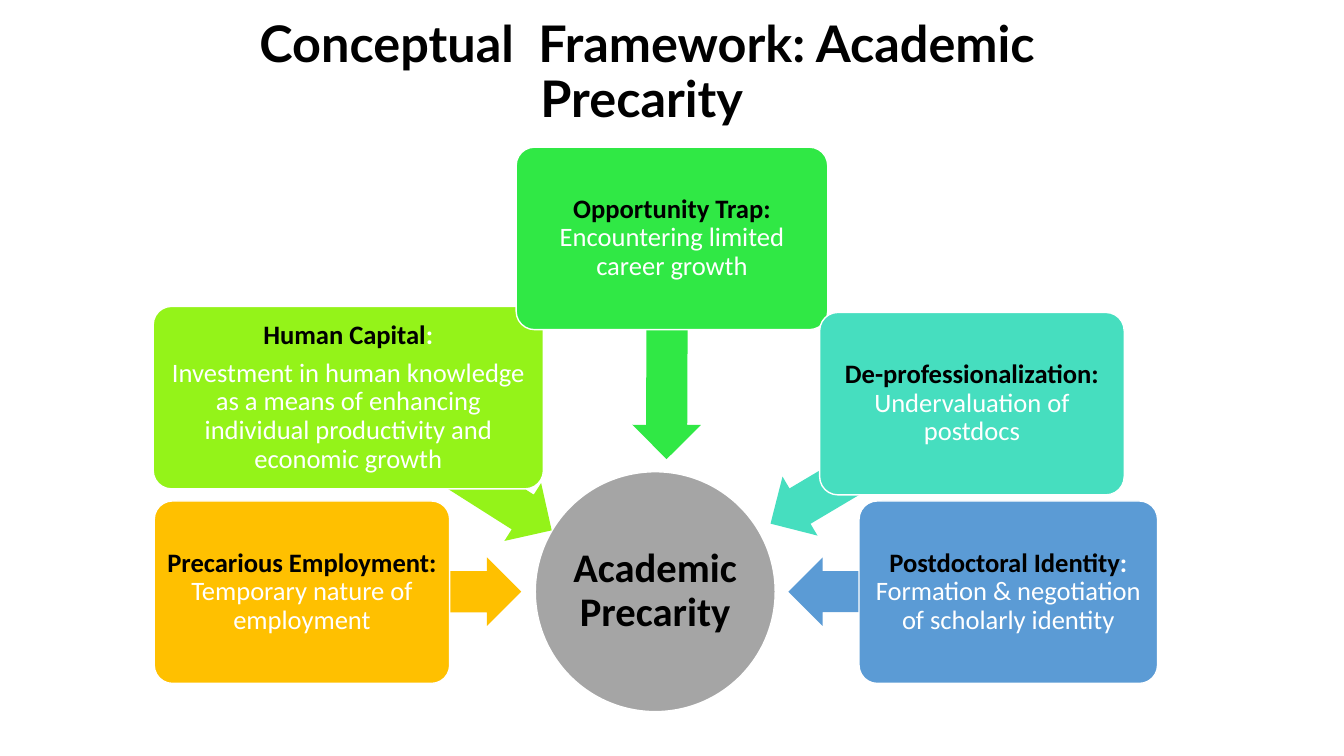
from pptx import Presentation
from pptx.util import Inches, Pt
from pptx.dml.color import RGBColor
from pptx.enum.shapes import MSO_SHAPE
from pptx.enum.text import MSO_ANCHOR, PP_ALIGN

# Grid: 100 columns by 100 rows over the slide
WIDE, HIGH = Inches(13.33), Inches(7.5)
BLACK, WHITE, GREY = "000000", "FFFFFF", "A5A5A5"
BOX_ROWS, ARROW_ROWS = 24.13, 9.07
LOW_BOX, LOW_ARROW = 66.27, 73.73

# Factors: fill, box (col, row, cols), arrow (col, row, cols, turn),
# paragraphs of (text, colour, bold) runs
FACTORS = [
    ("FFC000", (11.48, LOW_BOX, 21.98), (22.43, LOW_ARROW, 16.35, 180),
     [[("Precarious Employment: ", BLACK, True),
       ("Temporary nature of employment", WHITE, False)]]),
    ("94F319", (11.4, 40.53, 29.03), (25.28, 57.47, 17.1, 212.4),
     [[("Human Capital", BLACK, True), (":", WHITE, True)],
      [("Investment in human knowledge as a means of enhancing "
        "individual productivity and economic growth", WHITE, False)]]),
    ("30E845", (38.41, 19.47, 23.18), (41.41, 41.6, 16.43, 270.2),
     [[("Opportunity Trap: ", BLACK, True),
       ("Encountering limited career growth", WHITE, False)]]),
    ("46DEBF", (60.99, 41.33, 22.66), (56.11, 56.8, 17.48, 329.3),
     [[("De-professionalization: ", BLACK, True),
       ("Undervaluation of postdocs", WHITE, False)]]),
    ("5B9BD5", (63.92, LOW_BOX, 22.21), (58.66, LOW_ARROW, 16.35, 0),
     [[("Postdoctoral Identity", BLACK, True), (": ", WHITE, True),
       ("Formation & negotiation of scholarly identity", WHITE, False)]]),
]


def paint(code):
    return RGBColor.from_string(code)


def place(col, row, cols, rows):
    """Turn grid cells into left, top, width and height."""
    return [int(part * side / 100) for part, side in
            zip((col, row, cols, rows), (WIDE, HIGH, WIDE, HIGH))]


def apply(item, style):
    for name, value in style.items():
        setattr(item, name, value)


def write(shape, paras, size, face, inset, after=0):
    """Fill a shape with centred paragraphs of styled runs."""
    frame = shape.text_frame
    sides = ("left", "right", "top", "bottom")
    apply(frame, {f"margin_{side}": Inches(inset) for side in sides})
    apply(frame, {"word_wrap": True, "vertical_anchor": MSO_ANCHOR.MIDDLE})
    for index, runs in enumerate(paras):
        para = frame.add_paragraph() if index else frame.paragraphs[0]
        apply(para, {"alignment": PP_ALIGN.CENTER, "line_spacing": 0.9,
                     "space_after": Pt(after)})
        for text, color, bold in runs:
            if text == "\n":
                para.add_line_break()
                continue
            run = para.add_run()
            run.text = text
            apply(run.font, {"size": Pt(size), "name": face, "bold": bold})
            run.font.color.rgb = paint(color)


def draw(slide, kind, cells, fill, edge=True, adjust=()):
    """Add a flat shape, with a thin white edge if wanted."""
    shape = slide.shapes.add_shape(kind, *place(*cells))
    shape.shadow.inherit = False
    shape.fill.solid()
    shape.fill.fore_color.rgb = paint(fill)
    if edge:
        shape.line.color.rgb = paint(WHITE)
        shape.line.width = Pt(1)
    else:
        shape.line.fill.background()
    for index, value in enumerate(adjust):
        shape.adjustments[index] = value
    return shape


def title(slide):
    box = slide.shapes.add_textbox(*place(2.25, 2.8, 91.82, 13.87))
    runs = [(text, BLACK, True) for text in
            ("Conceptual  Framework: Academic", "\n", "Precarity ")]
    write(box, [runs], 36, "Lato", 0.05)


def center(slide):
    disc = draw(slide, MSO_SHAPE.OVAL, (39.83, 62.4, 17.85, 31.73), GREY)
    write(disc, [[("Academic Precarity", BLACK, True)]],
          29, "Calibri", 0.02, 10)


def factor(slide, fill, box, arrow, paras):
    *spot, turn = arrow
    point = draw(slide, MSO_SHAPE.LEFT_ARROW, (*spot, ARROW_ROWS), fill,
                 False, (0.6, 0.5))
    point.rotation = turn
    card = draw(slide, MSO_SHAPE.ROUNDED_RECTANGLE, (*box, BOX_ROWS), fill,
                True, (0.1,))
    write(card, paras, 19, "Calibri", 0.04, 6.65)


def main():
    deck = Presentation()
    apply(deck, {"slide_width": WIDE, "slide_height": HIGH})
    slide = deck.slides.add_slide(deck.slide_layouts[6])
    title(slide)
    center(slide)
    for item in FACTORS:
        factor(slide, *item)
    deck.save("out.pptx")


if __name__ == "__main__":
    main()
